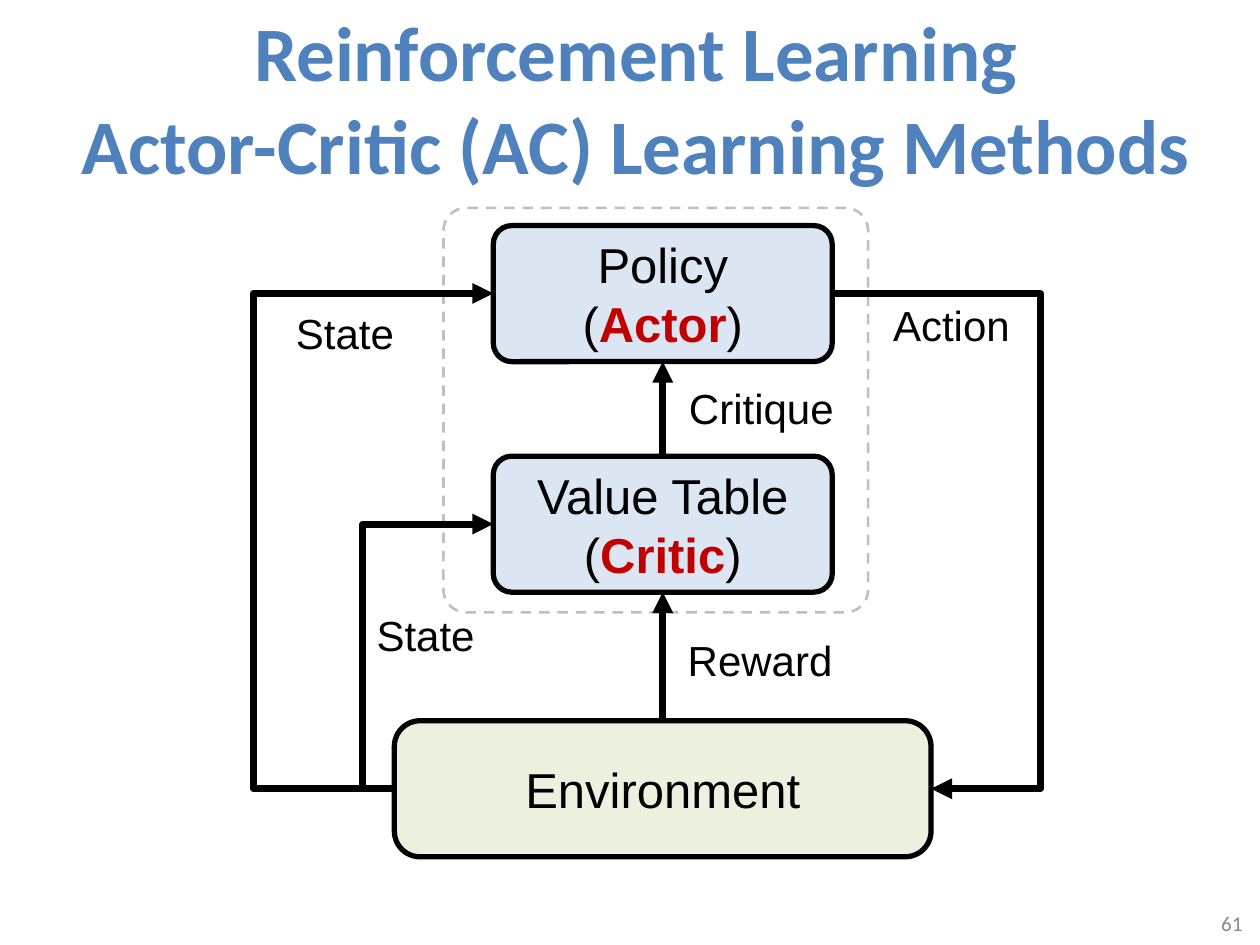
from pptx import Presentation
from pptx.dml.color import RGBColor
from pptx.enum.dml import MSO_LINE
from pptx.enum.shapes import MSO_CONNECTOR, MSO_SHAPE
from pptx.enum.text import MSO_ANCHOR, MSO_AUTO_SIZE, PP_ALIGN
from pptx.oxml.ns import qn
from pptx.util import Inches, Pt
from lxml import etree

ROUNDED = MSO_SHAPE.ROUNDED_RECTANGLE
STRAIGHT, ELBOW = MSO_CONNECTOR.STRAIGHT, MSO_CONNECTOR.ELBOW
LEFT, CENTER, RIGHT = PP_ALIGN.LEFT, PP_ALIGN.CENTER, PP_ALIGN.RIGHT
MIDDLE, TOP = MSO_ANCHOR.MIDDLE, MSO_ANCHOR.TOP
SIDE_TOP, SIDE_LEFT, SIDE_BOTTOM, SIDE_RIGHT = range(4)

COLORS = {"title": "4F81BD", "number": "898989", "ink": "000000", "accent": "C00000",
          "learner": "DCE6F2", "world": "EBF1DE", "frame": "BFBFBF"}

# Content: text is a list of lines, each a list of (words, highlighted) spans
TITLE = [[("Reinforcement Learning", False)],
         [("Actor-Critic (AC) Learning Methods", False)]]
PAGE_NUMBER = [[("61", False)]]
AXIS = 5.26      # common vertical centre line of the boxes
BOX_HEIGHT = 1.08
# name: (text, top, width, corner, fill)
BOXES = {
    "policy": ([[("Policy", False)], [("(", False), ("Actor", True), (")", False)]],
               1.79, 2.69, 0.136, "learner"),
    "value": ([[("Value Table", False)], [("(", False), ("Critic", True), (")", False)]],
              3.62, 2.69, 0.136, "learner"),
    "environment": ([[("Environment", False)]], 5.72, 4.26, 0.189, "world"),
}
# (from box, side, to box, side, x of the vertical run or None if straight)
ARROWS = [
    ("policy", SIDE_RIGHT, "environment", SIDE_RIGHT, 8.26),
    ("environment", SIDE_LEFT, "policy", SIDE_LEFT, 2.01),
    ("environment", SIDE_LEFT, "value", SIDE_LEFT, 2.88),
    ("environment", SIDE_TOP, "value", SIDE_BOTTOM, None),
    ("value", SIDE_TOP, "policy", SIDE_BOTTOM, None),
]
# (words, left, top, width)
LABELS = [("Action", 6.99, 2.33, 1.14), ("Reward", 5.36, 4.99, 1.36),
          ("State", 2.25, 2.39, 0.99), ("State", 2.89, 4.79, 0.99),
          ("Critique", 5.37, 2.99, 1.36)]


def color(name):
    return RGBColor.from_string(COLORS[name])


def write(shape, lines, size, font="Arial", ink="ink", bold=False, align=CENTER,
          anchor=MIDDLE, wrap=True, inset=None):
    frame = shape.text_frame
    frame.word_wrap = wrap
    frame.auto_size = MSO_AUTO_SIZE.NONE if wrap else MSO_AUTO_SIZE.SHAPE_TO_FIT_TEXT
    frame.vertical_anchor = anchor
    if inset is not None:
        frame.margin_left = frame.margin_right = Inches(inset)
        frame.margin_top = frame.margin_bottom = Inches(inset)
    para = frame.paragraphs[0]
    para.alignment = align
    for index, line in enumerate(lines):
        if index:
            para.add_line_break()
        for words, highlighted in line:
            span = para.add_run()
            span.text = words
            span.font.name, span.font.size = font, Pt(size)
            span.font.bold = bold or highlighted
            span.font.color.rgb = color("accent" if highlighted else ink)


def add_rounded(page, left, top, width, height, corner, line, weight, fill=None):
    box = page.shapes.add_shape(ROUNDED, *map(Inches, (left, top, width, height)))
    box.shadow.inherit = False
    box.adjustments[0] = corner
    if fill:
        box.fill.solid()
        box.fill.fore_color.rgb = color(fill)
    else:
        box.fill.background()
    box.line.color.rgb = color(line)
    box.line.width = Pt(weight)
    return box


def add_arrow(page, start, start_side, end, end_side, run_x):
    kind = STRAIGHT if run_x is None else ELBOW
    arrow = page.shapes.add_connector(kind, 0, 0, 0, 0)
    arrow.begin_connect(start, start_side)
    arrow.end_connect(end, end_side)
    arrow.line.color.rgb = color("ink")
    arrow.line.width = Pt(4)
    etree.SubElement(arrow.line._get_or_add_ln(), qn("a:tailEnd"), type="triangle")
    properties = arrow._element.spPr
    etree.SubElement(properties, qn("a:effectLst"))
    if run_x is not None:
        # The bend is a share of the connector's width, measured from its start
        share = (Inches(run_x) - arrow.begin_x) / (arrow.end_x - arrow.begin_x)
        guides = properties.find(qn("a:prstGeom")).find(qn("a:avLst"))
        etree.SubElement(guides, qn("a:gd"), name="adj1",
                         fmla=f"val {round(share * 100000)}")


def main():
    deck = Presentation()
    deck.slide_width, deck.slide_height = Inches(10), Inches(7.5)
    page = deck.slides.add_slide(deck.slide_layouts[5])

    # Dashed frame behind the actor and the critic
    frame = add_rounded(page, 3.52, 1.65, 3.37, 3.21, 0.056, "frame", 1.5)
    frame.line.dash_style = MSO_LINE.DASH

    # Title and page number
    title = page.shapes.title
    title.left, title.top, title.width, title.height = map(Inches, (0.26, 0.09, 9.58, 1.36))
    write(title, TITLE, 44, font="Calibri", ink="title", bold=True)
    number = page.shapes.add_textbox(*map(Inches, (7.63, 7.13, 2.33, 0.4)))
    write(number, PAGE_NUMBER, 12, font="Calibri", ink="number", align=RIGHT)

    # Boxes centred on the axis
    boxes = {}
    for name, (lines, top, width, corner, fill) in BOXES.items():
        boxes[name] = add_rounded(page, AXIS - width / 2, top, width, BOX_HEIGHT,
                                  corner, "ink", 3, fill)
        write(boxes[name], lines, 28, inset=0)

    # Arrows and their labels
    for start, start_side, end, end_side, run_x in ARROWS:
        add_arrow(page, boxes[start], start_side, boxes[end], end_side, run_x)
    for words, left, top, width in LABELS:
        label = page.shapes.add_textbox(*map(Inches, (left, top, width, 0.5)))
        write(label, [[(words, False)]], 24, align=LEFT, anchor=TOP, wrap=False)

    deck.save("out.pptx")


if __name__ == "__main__":
    main()
